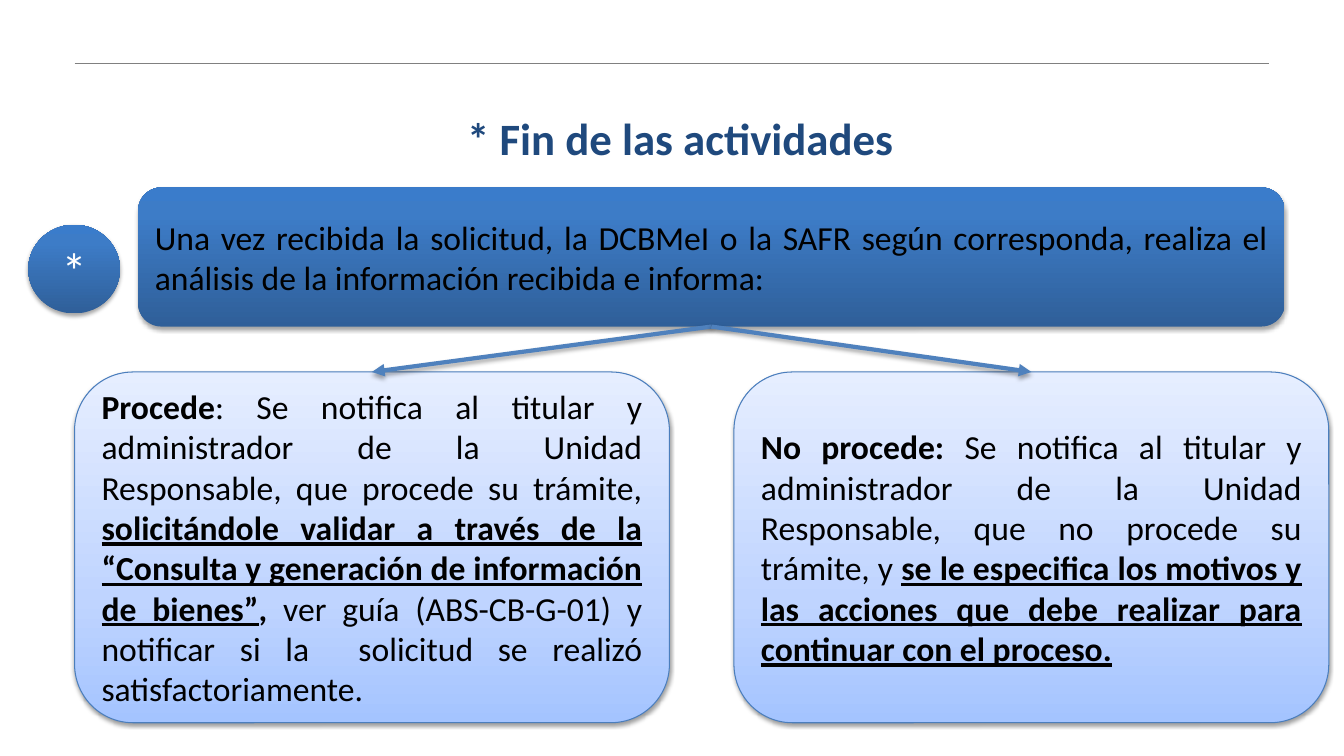
import pptx
import pptx.util
import pptx.dml.color
import pptx.enum.shapes
import pptx.enum.text
import pptx.oxml
import pptx.oxml.ns
from dataclasses import dataclass

SHAPE = pptx.enum.shapes.MSO_SHAPE
ALIGN = pptx.enum.text.PP_ALIGN
SPACE = pptx.oxml.ns.nsdecls("a")
WIDE, HIGH = pptx.util.Inches(13.33), pptx.util.Inches(7.5)


@dataclass(frozen=True)
class Theme:
    font: str = "Calibri"
    title: int = 32
    body: int = 24
    mark: int = 36
    navy: str = "1F497D"
    black: str = "000000"
    white: str = "FFFFFF"
    rule: str = "808080"
    edge: str = "4B7EBC"
    arrow: str = "4F81BD"
    deep: tuple = ((0, "2F5F99"), (80, "3D7CC7"), (100, "3A7CCB"))
    pale: tuple = ((0, "A4C4FF"), (35, "BFD4FF"), (100, "E6EEFF"))


THEME = Theme()

STEP = ("Una vez recibida la solicitud, la DCBMeI o la SAFR según corresponda, "
        "realiza el análisis de la información recibida e informa:")
CARDS = [
    [("Procede", "b"),
     (": Se notifica al titular y administrador de la Unidad Responsable, "
      "que procede su trámite, ", ""),
     ("solicitándole validar a través de la “Consulta y generación de "
      "información de bienes”", "bu"),
     (", ", "b"),
     ("ver guía (ABS-CB-G-01) y notificar si la  solicitud se realizó "
      "satisfactoriamente.", "")],
    [("No procede: ", "b"),
     ("Se notifica al titular y administrador de la Unidad Responsable, "
      "que no procede su trámite, y ", ""),
     ("se le especifica los motivos y las acciones que debe realizar para "
      "continuar con el proceso.", "bu")],
]


def place(x, y, w, h):
    return [round(part * size / 100)
            for part, size in zip((x, y, w, h), (WIDE, HIGH, WIDE, HIGH))]


def tint(code):
    return pptx.dml.color.RGBColor.from_string(code)


def shade(shape, alpha=35, dist=1.8):
    blur, gap = pptx.util.Pt(3.1), pptx.util.Pt(dist)
    shape._element.spPr.append(pptx.oxml.parse_xml(
        f'<a:effectLst {SPACE}><a:outerShdw blurRad="{blur}" dist="{gap}" '
        f'dir="5400000" rotWithShape="0"><a:srgbClr val="{THEME.black}">'
        f'<a:alpha val="{alpha * 1000}"/></a:srgbClr></a:outerShdw></a:effectLst>'))


def blend(shape, stops):
    marks = "".join(f'<a:gs pos="{pos * 1000}"><a:srgbClr val="{code}"/></a:gs>'
                    for pos, code in stops)
    shape.fill.solid()
    props = shape._element.spPr
    solid = props.find(pptx.oxml.ns.qn("a:solidFill"))
    props.replace(solid, pptx.oxml.parse_xml(
        f'<a:gradFill {SPACE} rotWithShape="1"><a:gsLst>{marks}</a:gsLst>'
        '<a:lin ang="16200000" scaled="0"/></a:gradFill>'))


def write(shape, parts, size, color, align):
    frame = shape.text_frame
    frame.word_wrap = True
    frame.vertical_anchor = pptx.enum.text.MSO_ANCHOR.MIDDLE
    para = frame.paragraphs[0]
    para.alignment = align
    for text, style in parts:
        run = para.add_run()
        run.text = text
        font = run.font
        font.name, font.size = THEME.font, pptx.util.Pt(size)
        font.bold, font.underline = "b" in style, "u" in style
        font.color.rgb = tint(color)


def add_head(slide, box):
    x, y, w, h = place(*box)
    rule = slide.shapes.add_connector(
        pptx.enum.shapes.MSO_CONNECTOR.STRAIGHT, x, y, WIDE - x, y)
    rule.line.color.rgb = tint(THEME.rule)
    rule.line.width = pptx.util.Pt(0.75)
    rule._element.spPr.append(pptx.oxml.parse_xml(f"<a:effectLst {SPACE}/>"))
    title = slide.shapes.add_textbox(x, y, w, h)
    write(title, [("* Fin de las actividades", "b")],
          THEME.title, THEME.navy, ALIGN.CENTER)


def add_panel(slide, kind, box, stops, edge=None):
    panel = slide.shapes.add_shape(kind, *place(*box))
    panel.shadow.inherit = False
    panel._element.spPr.remove(panel._element.spPr.find(pptx.oxml.ns.qn("a:effectLst")))
    blend(panel, stops)
    if edge:
        panel.line.color.rgb = tint(edge)
        panel.line.width = pptx.util.Pt(0.75)
        shade(panel, 38, 1.6)
    else:
        panel.line.fill.background()
        shade(panel)
    return panel


def add_step(slide, box):
    step = add_panel(slide, SHAPE.ROUNDED_RECTANGLE, box, THEME.deep)
    write(step, [(STEP, "")], THEME.body, THEME.black, ALIGN.JUSTIFY)
    return step


def add_mark(slide, box):
    mark = add_panel(slide, SHAPE.FLOWCHART_CONNECTOR, box, THEME.deep)
    write(mark, [("*", "")], THEME.mark, THEME.white, ALIGN.CENTER)


def add_cards(slide, box, pitch):
    x, y, w, h = box
    cards = []
    for i, parts in enumerate(CARDS):
        card = add_panel(slide, SHAPE.ROUNDED_RECTANGLE,
                         (x + i * pitch, y, w, h), THEME.pale, THEME.edge)
        write(card, parts, THEME.body, THEME.black, ALIGN.JUSTIFY)
        cards.append(card)
    return cards


def add_arrow(slide, start, end):
    arrow = slide.shapes.add_connector(
        pptx.enum.shapes.MSO_CONNECTOR.STRAIGHT, 0, 0, 0, 0)
    arrow.begin_connect(start, 2)
    arrow.end_connect(end, 0)
    arrow.line.color.rgb = tint(THEME.arrow)
    arrow.line.width = pptx.util.Pt(3)
    arrow.line._get_or_add_ln().append(
        pptx.oxml.parse_xml(f'<a:tailEnd {SPACE} type="triangle"/>'))
    shade(arrow)


def main():
    deck = pptx.Presentation()
    deck.slide_width, deck.slide_height = WIDE, HIGH
    slide = deck.slides.add_slide(deck.slide_layouts[6])
    add_head(slide, (5.55, 8.4, 90.17, 19.47))
    step = add_step(slide, (10.28, 24.8, 85.3, 18.4))
    add_mark(slide, (2.1, 29.73, 6.83, 11.73))
    for card in add_cards(slide, (5.55, 49.2, 44.26, 46.4), 49.06):
        add_arrow(slide, step, card)
    deck.save("out.pptx")


if __name__ == "__main__":
    main()
